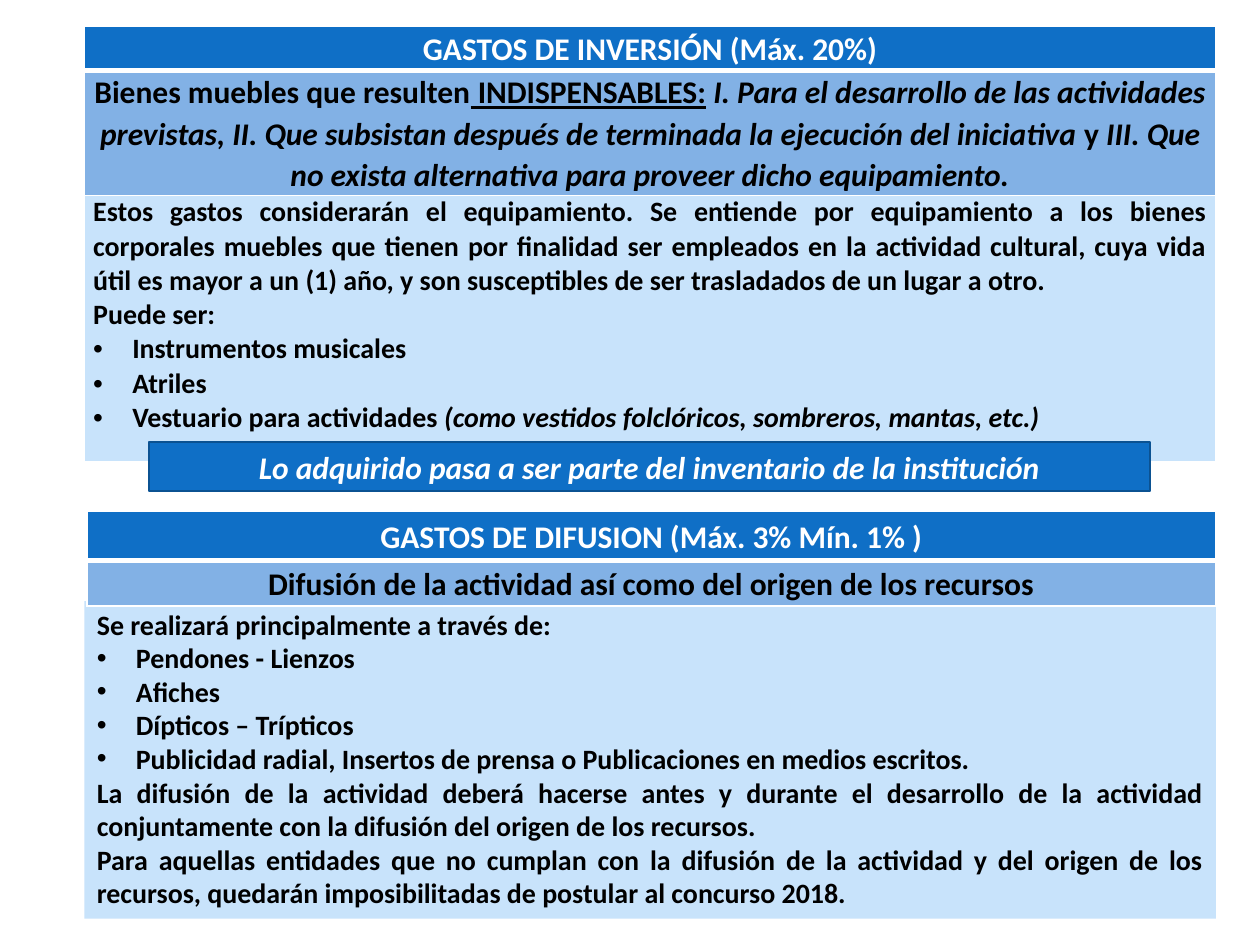
from lxml import etree
from pptx import Presentation
from pptx.dml.color import RGBColor
from pptx.enum.shapes import MSO_SHAPE
from pptx.enum.text import MSO_ANCHOR, PP_ALIGN
from pptx.oxml.ns import qn
from pptx.util import Inches, Pt

rgb = RGBColor.from_string
DARK, MID, LIGHT = "0F6FC6", "82B1E5", "C8E3FB"
LEFT, WIDTH = 0.67, 8.98


def write(tf, paras, size=18, color="000000", align=PP_ALIGN.CENTER, spacing=None):
    """Each paragraph is a list of (text, style); style letters: i italic, u underline.
    A paragraph that starts with "• " becomes a hanging bullet."""
    for n, runs in enumerate(paras):
        p = tf.paragraphs[0] if n == 0 else tf.add_paragraph()
        p.alignment = align
        if spacing:
            p.line_spacing = spacing
        if runs[0][0].startswith("• "):
            runs = [(runs[0][0][2:], runs[0][1])] + runs[1:]
            pPr = p._p.get_or_add_pPr()
            pPr.set("marL", str(Inches(0.31)))
            pPr.set("indent", str(-Inches(0.31)))
            etree.SubElement(pPr, qn("a:buFont")).set("typeface", "Arial")
            etree.SubElement(pPr, qn("a:buChar")).set("char", "•")
        for text, style in runs:
            r = p.add_run()
            r.text = text
            r.font.name = "Calibri"
            r.font.size = Pt(size)
            r.font.bold = True
            r.font.italic = "i" in style
            r.font.underline = "u" in style
            r.font.color.rgb = rgb(color)


def add_panel(left, top, width, rows, inset, anchor):
    """Add a one-column table; rows are (height, fill, bottom border, paragraphs, format)."""
    height = sum(row[0] for row in rows)
    table = s.shapes.add_table(len(rows), 1, Inches(left), Inches(top),
                               Inches(width), Inches(height)).table
    for n, (row_height, fill, bottom, paras, fmt) in enumerate(rows):
        table.rows[n].height = Inches(row_height)
        cell = table.cell(n, 0)
        cell.margin_left = cell.margin_right = Inches(inset)
        cell.margin_top = cell.margin_bottom = 0
        cell.vertical_anchor = anchor
        cell.fill.solid()
        cell.fill.fore_color.rgb = rgb(fill)
        tcPr = cell._tc.get_or_add_tcPr()
        for k, (side, points) in enumerate((("L", 1), ("R", 1), ("T", 1), ("B", bottom))):
            ln = etree.Element(qn(f"a:ln{side}"), w=str(Pt(points)))
            solid = etree.SubElement(ln, qn("a:solidFill"))
            etree.SubElement(solid, qn("a:srgbClr")).set("val", "FFFFFF")
            tcPr.insert(k, ln)
        write(cell.text_frame, paras, **fmt)


prs = Presentation()
prs.slide_width, prs.slide_height = Inches(10), Inches(7.5)
s = prs.slides.add_slide(prs.slide_layouts[6])

header = dict(color="FFFFFF", spacing=1.07)
subheader = dict(spacing=1.07)
body = dict(size=16, align=PP_ALIGN.JUSTIFY)

# Investment expenses
add_panel(LEFT, 0.21, WIDTH, [
    (0.35, DARK, 3, [[("GASTOS DE INVERSIÓN (Máx. 20%)", "")]], header),
    (0.99, MID, 1, [[
        ("Bienes muebles que resulten", ""),
        (" INDISPENSABLES:", "u"),
        (" ", ""),
        ("I. Para el desarrollo de las actividades previstas, II. Que subsistan "
         "después de terminada la ejecución del iniciativa ", "i"),
        ("y ", ""),
        ("III. Que no exista alternativa para proveer dicho equipamiento.", "i"),
    ]], subheader),
], 0.02, MSO_ANCHOR.MIDDLE)

add_panel(LEFT, 1.55, WIDTH, [
    (2.13, LIGHT, 3, [
        [("Estos gastos considerarán el equipamiento. Se entiende por equipamiento a los "
          "bienes corporales muebles que tienen por finalidad ser empleados en la "
          "actividad cultural, cuya vida útil es mayor a un (1) año, y son susceptibles "
          "de ser trasladados de un lugar a otro. ", "")],
        [("Puede ser:", "")],
        [("• Instrumentos musicales ", "")],
        [("• Atriles ", "")],
        [("• Vestuario para actividades ", ""),
         ("(como vestidos folclóricos, sombreros, mantas, etc.)", "i")],
    ], body),
], 0.07, MSO_ANCHOR.TOP)

# Publicity expenses
details = s.shapes.add_shape(MSO_SHAPE.RECTANGLE, Inches(LEFT), Inches(4.77),
                             Inches(WIDTH), Inches(2.52))
details.shadow.inherit = False
details.fill.solid()
details.fill.fore_color.rgb = rgb(LIGHT)
details.line.fill.background()
tf = details.text_frame
tf.word_wrap = True
tf.vertical_anchor = MSO_ANCHOR.TOP
write(tf, [[(text, "")] for text in (
    "Se realizará principalmente a través de: ",
    "• Pendones - Lienzos",
    "• Afiches",
    "• Dípticos – Trípticos ",
    "• Publicidad radial, Insertos de prensa o Publicaciones en medios escritos.",
    "La difusión de la actividad deberá hacerse antes y durante el desarrollo de la "
    "actividad conjuntamente con la difusión del origen de los recursos.",
    "Para aquellas entidades que no cumplan con la difusión de la actividad y del origen "
    "de los recursos, quedarán imposibilitadas de postular al concurso 2018.",
)], **body)

add_panel(0.69, 4.06, 8.96, [
    (0.39, DARK, 3, [[("GASTOS DE DIFUSION (Máx. 3% Mín. 1% )", "")]], header),
    (0.36, MID, 1, [[("Difusión de la actividad así como del origen de los recursos", "")]],
     subheader),
], 0.02, MSO_ANCHOR.MIDDLE)

# Inventory reminder
banner = s.shapes.add_shape(MSO_SHAPE.RECTANGLE, Inches(1.18), Inches(3.51),
                            Inches(7.95), Inches(0.39))
banner.shadow.inherit = False
banner.fill.solid()
banner.fill.fore_color.rgb = rgb(DARK)
banner.line.color.rgb = rgb("0B5292")
banner.line.width = Pt(1)
tf = banner.text_frame
tf.word_wrap = True
tf.vertical_anchor = MSO_ANCHOR.MIDDLE
write(tf, [[("Lo adquirido pasa a ser parte del inventario de la institución", "i")]],
      color="FFFFFF")

prs.save("out.pptx")
